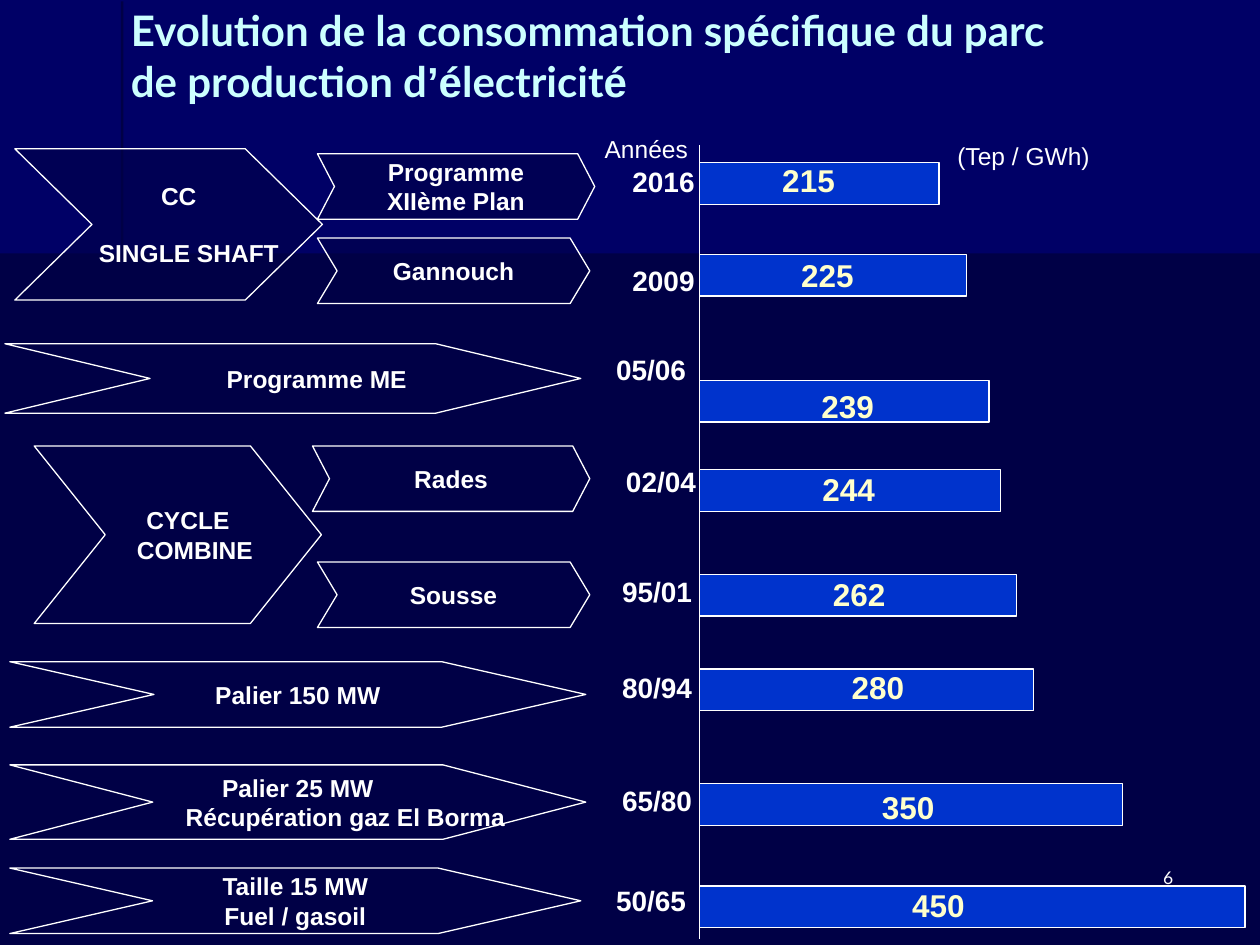
from dataclasses import dataclass

from lxml import etree
from pptx import Presentation
from pptx.dml.color import RGBColor
from pptx.enum.shapes import MSO_CONNECTOR, MSO_SHAPE
from pptx.enum.text import MSO_ANCHOR, PP_ALIGN
from pptx.oxml.ns import qn
from pptx.util import Cm, Pt

RECTANGLE, CHEVRON = MSO_SHAPE.RECTANGLE, MSO_SHAPE.CHEVRON
STRAIGHT = MSO_CONNECTOR.STRAIGHT
LEFT, CENTER, RIGHT = PP_ALIGN.LEFT, PP_ALIGN.CENTER, PP_ALIGN.RIGHT
MIDDLE = MSO_ANCHOR.MIDDLE


@dataclass(frozen=True)
class Theme:
    background: str = "000066"
    panel: str = "000046"
    bar: str = "0033CC"
    white: str = "FFFFFF"
    title: str = "CCFFFF"
    value: str = "FFFFCC"
    body_font: str = "Arial"
    title_font: str = "Lato"
    title_size: int = 24
    value_size: int = 18
    year_size: int = 16
    label_size: int = 14
    number_size: int = 10
    outline: float = 0.75
    chevron_alpha: int = 54


class Board:
    def __init__(self, slide, theme):
        self.slide, self.theme = slide, theme
        slide.background.fill.solid()
        slide.background.fill.fore_color.rgb = RGBColor.from_string(theme.background)

    def style(self, font, size, color, bold=True, name=None):
        font.name = name or self.theme.body_font
        font.size = Pt(size)
        font.bold = bold
        font.color.rgb = RGBColor.from_string(color)

    def block(self, kind, box, fill, outlined=True):
        shape = self.slide.shapes.add_shape(kind, *map(Cm, box))
        shape.shadow.inherit = False
        shape.fill.solid()
        shape.fill.fore_color.rgb = RGBColor.from_string(fill)
        if outlined:
            shape.line.color.rgb = RGBColor.from_string(self.theme.white)
            shape.line.width = Pt(self.theme.outline)
        else:
            shape.line.fill.background()
        return shape

    def panel(self, *box):
        self.block(RECTANGLE, box, self.theme.panel, outlined=False)

    def bar(self, *box):
        self.block(RECTANGLE, box, self.theme.bar)

    def chevron(self, box, depth, lines, gap=0):
        arrow = self.block(CHEVRON, box, self.theme.panel)
        arrow.adjustments[0] = depth
        color = arrow.fill._xPr.find(qn("a:solidFill"))[0]
        etree.SubElement(color, qn("a:alpha"), val=str(self.theme.chevron_alpha * 1000))
        frame = arrow.text_frame
        frame.word_wrap = False
        frame.vertical_anchor = MIDDLE
        for index, (words, indent) in enumerate(lines):
            line = frame.add_paragraph() if index else frame.paragraphs[0]
            line.text = words
            line.alignment = CENTER
            if indent:
                properties = line._p.get_or_add_pPr()
                properties.set("marL", str(Cm(indent)))
                properties.set("indent", "0")
            if index and gap:
                line.space_before = Pt(gap)
            self.style(line.font, self.theme.label_size, self.theme.white)

    def text(self, box, words, size, color, bold=True, name=None, align=LEFT):
        frame = self.slide.shapes.add_textbox(*map(Cm, box)).text_frame
        frame.word_wrap = False
        line = frame.paragraphs[0]
        line.text = words
        line.alignment = align
        self.style(line.font, size, color, bold, name)

    def title(self, box, lines):
        frame = self.slide.shapes.add_textbox(*map(Cm, box)).text_frame
        frame.word_wrap = False
        for index, pieces in enumerate(lines):
            line = frame.add_paragraph() if index else frame.paragraphs[0]
            for position, words in enumerate(pieces):
                run = line.add_run()
                run.text = words
                name = self.theme.body_font if position % 2 else self.theme.title_font
                self.style(run.font, self.theme.title_size, self.theme.title, name=name)

    def axis(self, x, top, bottom):
        line = self.slide.shapes.add_connector(STRAIGHT, Cm(x), Cm(top), Cm(x), Cm(bottom))
        line.line.color.rgb = RGBColor.from_string(self.theme.white)
        line.line.width = Pt(self.theme.outline)
        etree.SubElement(line._element.spPr, qn("a:effectLst"))


AXIS_X = 14.1
BAR_HEIGHT = 0.84
YEAR_SIZE = (1.93, 0.94)
VALUE_SIZE = (1.6, 1.02)

PANELS = [
    (2.46, 5.13, 22.94, 13.92),
    (0, 5.13, 2.46, 13.92),
    (2.44, 0.03, 0.05, 5.1),
    (0, 5.11, 25.4, 0.05),
]

CONSUMPTION = [
    ("2016", 12.5, 3.2, 3.28, 4.83, "215", 15.52, 3.12),
    ("2009", 12.5, 5.18, 5.13, 5.38, "225", 15.9, 5.03),
    ("05/06", 12.17, 6.99, 7.67, 5.84, "239", 16.31, 7.67),
    ("02/04", 12.37, 9.25, 9.47, 6.07, "244", 16.33, 9.35),
    ("95/01", 12.29, 11.46, 11.58, 6.4, "262", 16.54, 11.46),
    ("80/94", 12.29, 13.39, 13.49, 6.73, "280", 16.92, 13.34),
    ("65/80", 12.29, 15.67, 15.8, 8.53, "350", 17.53, 15.77),
    ("50/65", 12.17, 17.68, 17.86, 11, "450", 18.14, 17.73),
]

PROGRAMMES = [
    ((0.2, 17.5, 11.51, 1.32), 2.18, [("Taille 15 MW", 0), ("Fuel / gasoil", 0)]),
    ((0.2, 15.42, 11.61, 1.5), 1.92,
     [("Palier 25 MW", 0), ("Récupération gaz El Borma", 1.92)]),
    ((0.2, 13.34, 11.61, 1.32), 2.2, [("Palier 150 MW", 0)]),
    ((6.4, 11.33, 5.49, 1.32), 0.3, [("Sousse", 0)]),
    ((6.3, 8.99, 5.59, 1.32), 0.26, [("Rades", 0)]),
    ((0.1, 6.93, 11.61, 1.4), 2.09, [("Programme ME", 0.96)]),
    ((0.69, 8.99, 5.79, 3.58), 0.4, [("CYCLE", 0.41), ("COMBINE", 0.69)]),
    ((6.4, 4.8, 5.49, 1.32), 0.3, [("Gannouch", 0)]),
    ((6.4, 3.1, 5.59, 1.32), 0.26, [("Programme", 0), ("XIIème Plan", 0)]),
    ((0.3, 3, 6.2, 3.05), 0.51, [("CC", 0.41), ("SINGLE SHAFT", 0.82)], 16),
]

TITLE = [
    ("Evolution de la consommation sp", "é", "cifique du parc"),
    ("de production d", "’é", "lectricit", "é"),
]


def main():
    deck = Presentation()
    deck.slide_width, deck.slide_height = Cm(25.4), Cm(19.05)
    theme = Theme()
    board = Board(deck.slides.add_slide(deck.slide_layouts[6]), theme)

    for panel in PANELS:
        board.panel(*panel)
    board.text((18.62, 17.35, 5.28, 1.27), "6", theme.number_size, theme.white,
               bold=False, name=theme.title_font, align=RIGHT)
    board.title((2.39, -0.03, 21.54, 2.29), TITLE)

    for programme in PROGRAMMES:
        board.chevron(*programme)
    for year, year_x, year_y, top, width, value, value_x, value_y in CONSUMPTION:
        board.bar(AXIS_X, top, width, BAR_HEIGHT)
        board.text((year_x, year_y, *YEAR_SIZE), year, theme.year_size, theme.white)
        board.text((value_x, value_y, *VALUE_SIZE), value, theme.value_size, theme.value)
    board.axis(AXIS_X, 2.92, 18.92)

    board.text((19.05, 2.72, 3.23, 0.84), "(Tep / GWh)", theme.label_size, theme.white, bold=False)
    board.text((11.94, 2.57, 2.18, 0.84), "Années", theme.label_size, theme.white, bold=False)
    deck.save("out.pptx")


if __name__ == "__main__":
    main()
